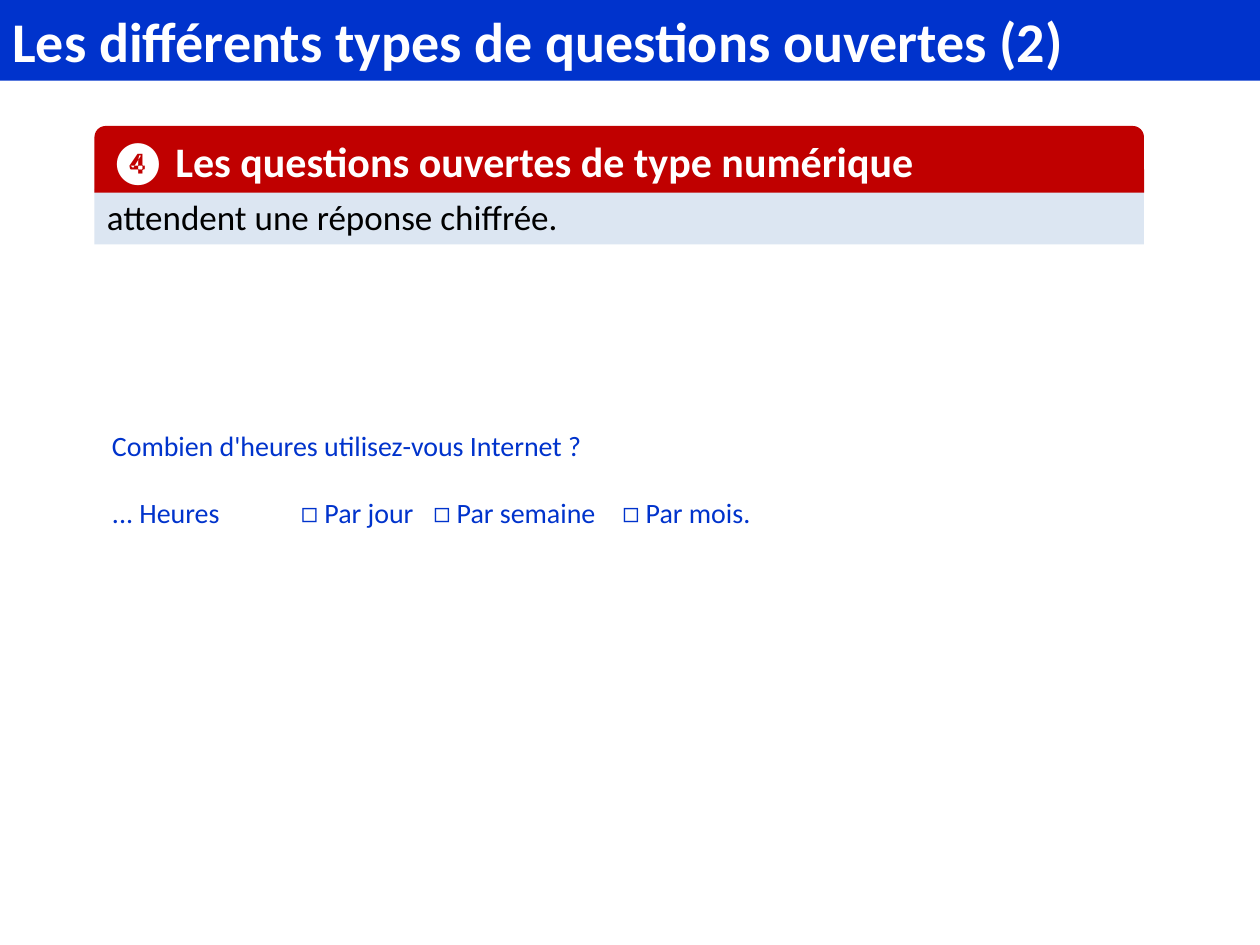
from pptx import Presentation
from pptx.dml.color import RGBColor as RGB
from pptx.enum.shapes import MSO_SHAPE as SHAPE
from pptx.enum.text import MSO_ANCHOR, MSO_AUTO_SIZE, PP_ALIGN
from pptx.util import Inches, Pt

THEME = {
    "font": "Calibri",
    "blue": RGB(0x00, 0x33, 0xCC),
    "red": RGB(0xC0, 0x00, 0x00),
    "pale": RGB(0xDC, 0xE6, 0xF2),
    "white": RGB(0xFF, 0xFF, 0xFF),
    "black": RGB(0x00, 0x00, 0x00),
    "title": 32, "heading": 24, "body": 20, "example": 16,
}

# Box (left, top, width, height), shape, fill, text, size, text colour, bold
BANDS = [
    ((0.75, 1.5, 8.33, 0.44), SHAPE.RECTANGLE, "pale",
     "attendent une réponse chiffrée.", "body", "black", False),
    ((0, 0, 10, 0.64), SHAPE.RECTANGLE, "blue",
     "Les différents types de questions ouvertes (2)", "title", "white", True),
    ((0.75, 1, 8.33, 0.53), SHAPE.ROUND_2_SAME_RECTANGLE, "red",
     "❹ Les questions ouvertes de type numérique", "heading", "white", True),
]
EXAMPLE_BOX = (0.79, 3.35, 8.25, 0.91)
EXAMPLE = [
    "Combien d'heures utilisez-vous Internet ?",
    "... Heures\t\t◻ Par jour\t ◻ Par semaine\t ◻ Par mois.",
]
EXAMPLE_GAP = 19.5


def write(sp, lines, size, color, bold=False, gap=0):
    """Fill a shape with one paragraph per line, gap points apart."""
    tf = sp.text_frame
    tf.word_wrap = True
    tf.auto_size = MSO_AUTO_SIZE.SHAPE_TO_FIT_TEXT
    tf.vertical_anchor = MSO_ANCHOR.TOP
    for i, line in enumerate(lines):
        p = tf.add_paragraph() if i else tf.paragraphs[0]
        p.text = line
        p.alignment = PP_ALIGN.LEFT
        p.space_before = Pt(gap if i else 0)
        p.font.name = THEME["font"]
        p.font.size = Pt(THEME[size])
        p.font.bold = bold
        p.font.color.rgb = THEME[color]


def add_band(slide, box, shape, fill, text, size, color, bold):
    sp = slide.shapes.add_shape(shape, *map(Inches, box))
    sp.shadow.inherit = False
    sp.fill.solid()
    sp.fill.fore_color.rgb = THEME[fill]
    sp.line.fill.background()
    write(sp, [text], size, color, bold)


def main():
    prs = Presentation()
    prs.slide_width, prs.slide_height = Inches(10), Inches(7.5)
    slide = prs.slides.add_slide(prs.slide_layouts[6])
    for band in BANDS:
        add_band(slide, *band)
    example = slide.shapes.add_textbox(*map(Inches, EXAMPLE_BOX))
    write(example, EXAMPLE, "example", "blue", gap=EXAMPLE_GAP)
    prs.save("out.pptx")


if __name__ == "__main__":
    main()
